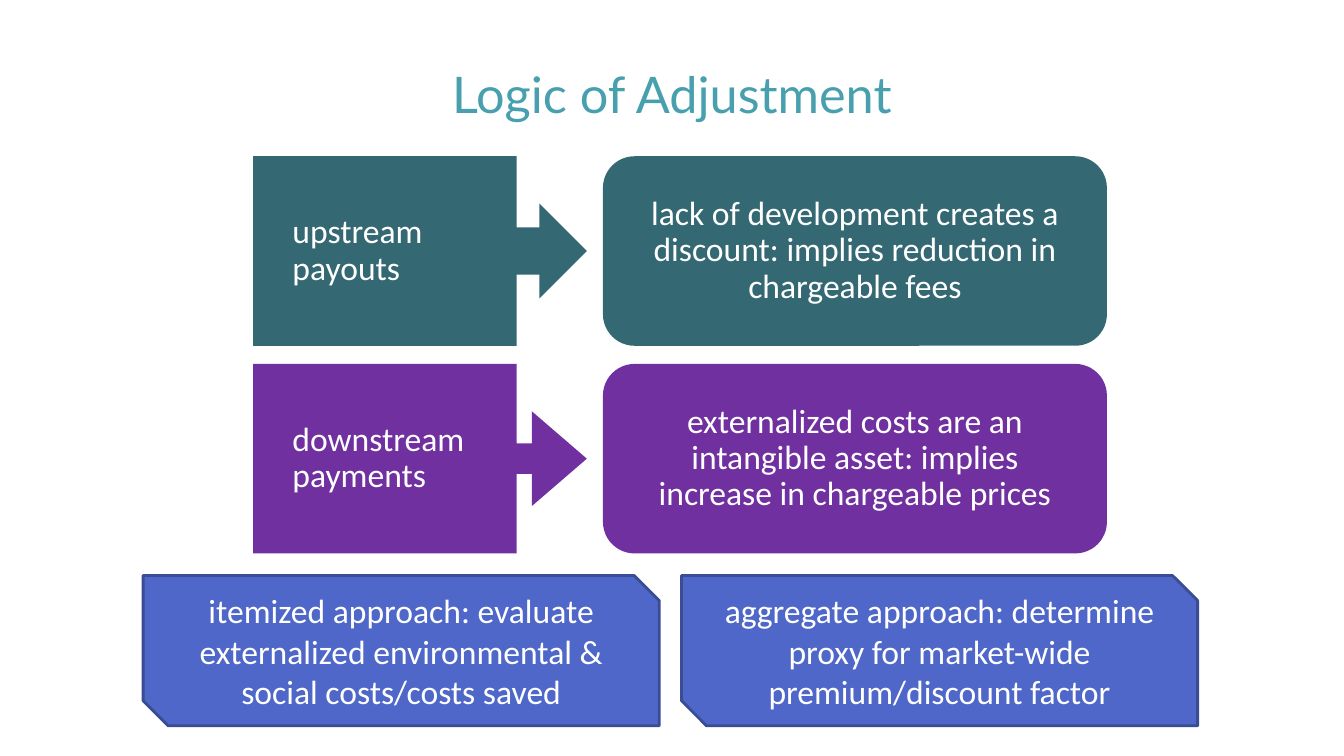
from pptx import Presentation
from pptx.dml.color import RGBColor
from pptx.enum.shapes import MSO_SHAPE
from pptx.enum.text import MSO_ANCHOR, PP_ALIGN
from pptx.util import Inches, Pt

TEAL = RGBColor(0x34, 0x68, 0x73)
PURPLE = RGBColor(0x70, 0x30, 0xA0)
BLUE = RGBColor(0x4E, 0x67, 0xC8)
NAVY = RGBColor(0x3A, 0x4C, 0x94)
AQUA = RGBColor(0x48, 0xA0, 0xAF)
WHITE = RGBColor(0xFF, 0xFF, 0xFF)

CALLOUT = MSO_SHAPE.RIGHT_ARROW_CALLOUT
ROUND = MSO_SHAPE.ROUNDED_RECTANGLE
SNIP = MSO_SHAPE.SNIP_2_DIAG_RECTANGLE
LEFT, CENTER = PP_ALIGN.LEFT, PP_ALIGN.CENTER
MIDDLE = MSO_ANCHOR.MIDDLE

TOP, PITCH, HIGH = 20.67, 27.47, 25.07
FLOWS = [
    (TEAL, (0.25, 0.25, 0.25, 0.79), "upstream\vpayouts",
     "lack of development creates a discount: implies reduction in chargeable fees"),
    (PURPLE, (0.16, 0.25, 0.29, 0.79), "downstream payments",
     "externalized costs are an intangible asset: implies increase in chargeable prices"),
]
WAYS = [
    "itemized approach: evaluate externalized environmental & social costs/costs saved",
    "aggregate approach: determine proxy for market-wide premium/discount factor",
]


class Board:
    """Draws styled elements on a slide split into 100 columns and 100 rows."""

    def __init__(self, deck):
        self.col = deck.slide_width / 100
        self.row = deck.slide_height / 100
        self.font, self.size, self.pad = "Calibri", 24, 0.23
        self.slide = deck.slides.add_slide(deck.slide_layouts[6])

    def box(self, x, y, w, h):
        return (round(x * self.col), round(y * self.row),
                round(w * self.col), round(h * self.row))

    def label(self, shape, text, font, size, color, align=CENTER):
        frame = shape.text_frame
        frame.word_wrap = True
        frame.vertical_anchor = MIDDLE
        line = frame.paragraphs[0]
        line.text = text
        line.alignment = align
        for run in line.runs:
            run.font.name = font
            run.font.size = Pt(size)
            run.font.color.rgb = color

    def title(self, text, *place):
        shape = self.slide.shapes.add_textbox(*self.box(*place))
        self.label(shape, text, "Lato", 36, AQUA)

    def shape(self, kind, place, fill, text, align=CENTER):
        shape = self.slide.shapes.add_shape(kind, *self.box(*place))
        shape.shadow.inherit = False
        shape.fill.solid()
        shape.fill.fore_color.rgb = fill
        shape.line.fill.background()
        self.label(shape, text, self.font, self.size, WHITE, align)
        return shape

    def inset(self, shape, left):
        frame = shape.text_frame
        frame.margin_left = Inches(left)
        frame.margin_top = frame.margin_right = frame.margin_bottom = Inches(self.pad)
        frame.paragraphs[0].line_spacing = 0.9

    def callout(self, place, fill, text, bends):
        shape = self.shape(CALLOUT, place, fill, text, LEFT)
        for spot, bend in enumerate(bends):
            shape.adjustments[spot] = bend
        self.inset(shape, 0.39)

    def panel(self, place, fill, text):
        self.inset(self.shape(ROUND, place, fill, text), self.pad)

    def snip(self, place, text):
        shape = self.shape(SNIP, place, BLUE, text)
        shape.line.color.rgb = NAVY
        shape.line.width = Pt(2)


def main():
    deck = Presentation()
    deck.slide_width, deck.slide_height = Inches(13.33), Inches(7.5)
    board = Board(deck)
    board.title("Logic of Adjustment", 5, 4, 90, 16.67)
    for step, (fill, bends, cause, effect) in enumerate(FLOWS):
        y = TOP + step * PITCH
        board.callout((18.83, y, 24.83, HIGH), fill, cause, bends)
        board.panel((44.86, y, 37.5, HIGH), fill, effect)
    for step, way in enumerate(WAYS):
        board.snip((10.65 + step * 40.06, 76.13, 38.4, 19.87), way)
    deck.save("out.pptx")


if __name__ == "__main__":
    main()
